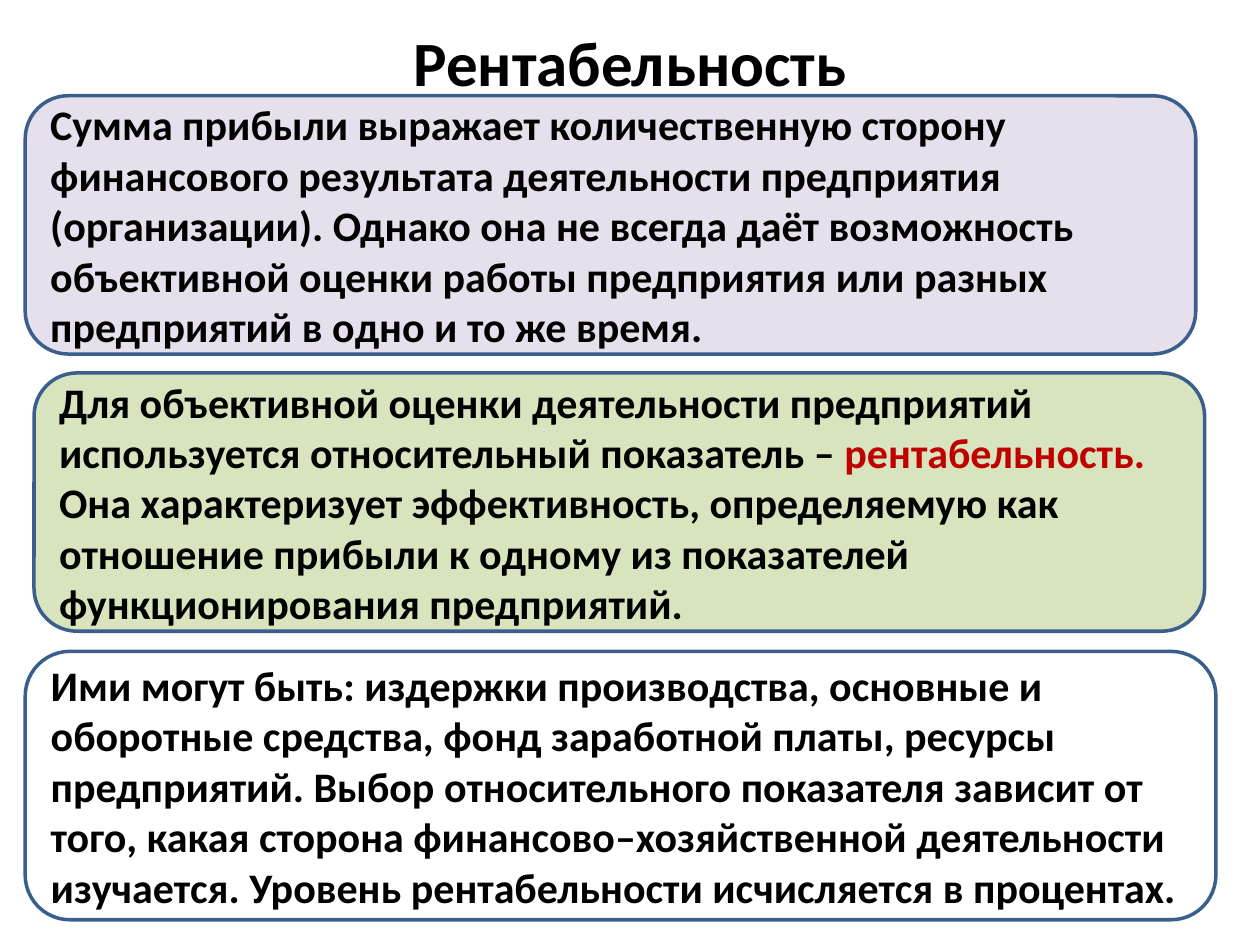
from pptx import Presentation
from pptx.dml.color import RGBColor
from pptx.enum.shapes import MSO_SHAPE as Shape
from pptx.enum.text import MSO_ANCHOR as Anchor, PP_ALIGN as Align
from pptx.util import Inches, Pt


def color(hex_code):
    return RGBColor.from_string(hex_code)


def style_font(font, size, hex_code="000000"):
    font.name = "Calibri"
    font.size = Pt(size)
    font.bold = True
    font.color.rgb = color(hex_code)


presentation = Presentation()
presentation.slide_width = Inches(10)
presentation.slide_height = Inches(7.5)
slide = presentation.slides.add_slide(presentation.slide_layouts[5])

title = slide.shapes.title
title.left, title.top = Inches(0.5), Inches(0.21)
title.width, title.height = Inches(9), Inches(0.55)
title.text_frame.text = "Рентабельность"
title.text_frame.vertical_anchor = Anchor.MIDDLE
title_paragraph = title.text_frame.paragraphs[0]
title_paragraph.alignment = Align.CENTER
style_font(title_paragraph.runs[0].font, 36)

# Each panel: left, top, width, height, fill, text pieces with their colours
panels = [
    (0.2, 0.76, 9.29, 2.05, "E6E0EC", [
        ("Сумма прибыли выражает количественную сторону финансового результата "
         "деятельности предприятия (организации). Однако она не всегда даёт "
         "возможность объективной оценки работы предприятия или разных "
         "предприятий в одно и то же время.", "000000"),
    ]),
    (0.27, 2.96, 9.29, 2.05, "D7E4BD", [
        ("Для объективной оценки деятельности предприятий используется "
         "относительный показатель – ", "000000"),
        ("рентабельность. ", "C00000"),
        ("Она характеризует эффективность, определяемую как отношение прибыли "
         "к одному из показателей функционирования предприятий.", "000000"),
    ]),
    (0.2, 5.17, 9.45, 2.13, "FFFFFF", [
        ("Ими могут быть: издержки производства, основные и оборотные средства, "
         "фонд заработной платы, ресурсы предприятий. Выбор относительного "
         "показателя зависит от того, какая сторона финансово–хозяйственной "
         "деятельности изучается. Уровень рентабельности исчисляется в "
         "процентах.", "000000"),
    ]),
]

for left, top, width, height, fill, pieces in panels:
    panel = slide.shapes.add_shape(
        Shape.ROUNDED_RECTANGLE,
        Inches(left), Inches(top), Inches(width), Inches(height))
    panel.shadow.inherit = False
    panel.fill.solid()
    panel.fill.fore_color.rgb = color(fill)
    panel.line.color.rgb = color("3A5F8C")
    panel.line.width = Pt(2)
    text_frame = panel.text_frame
    text_frame.word_wrap = True
    text_frame.vertical_anchor = Anchor.MIDDLE
    paragraph = text_frame.paragraphs[0]
    paragraph.alignment = Align.LEFT
    for text, text_color in pieces:
        run = paragraph.add_run()
        run.text = text
        style_font(run.font, 24, text_color)

presentation.save("out.pptx")
